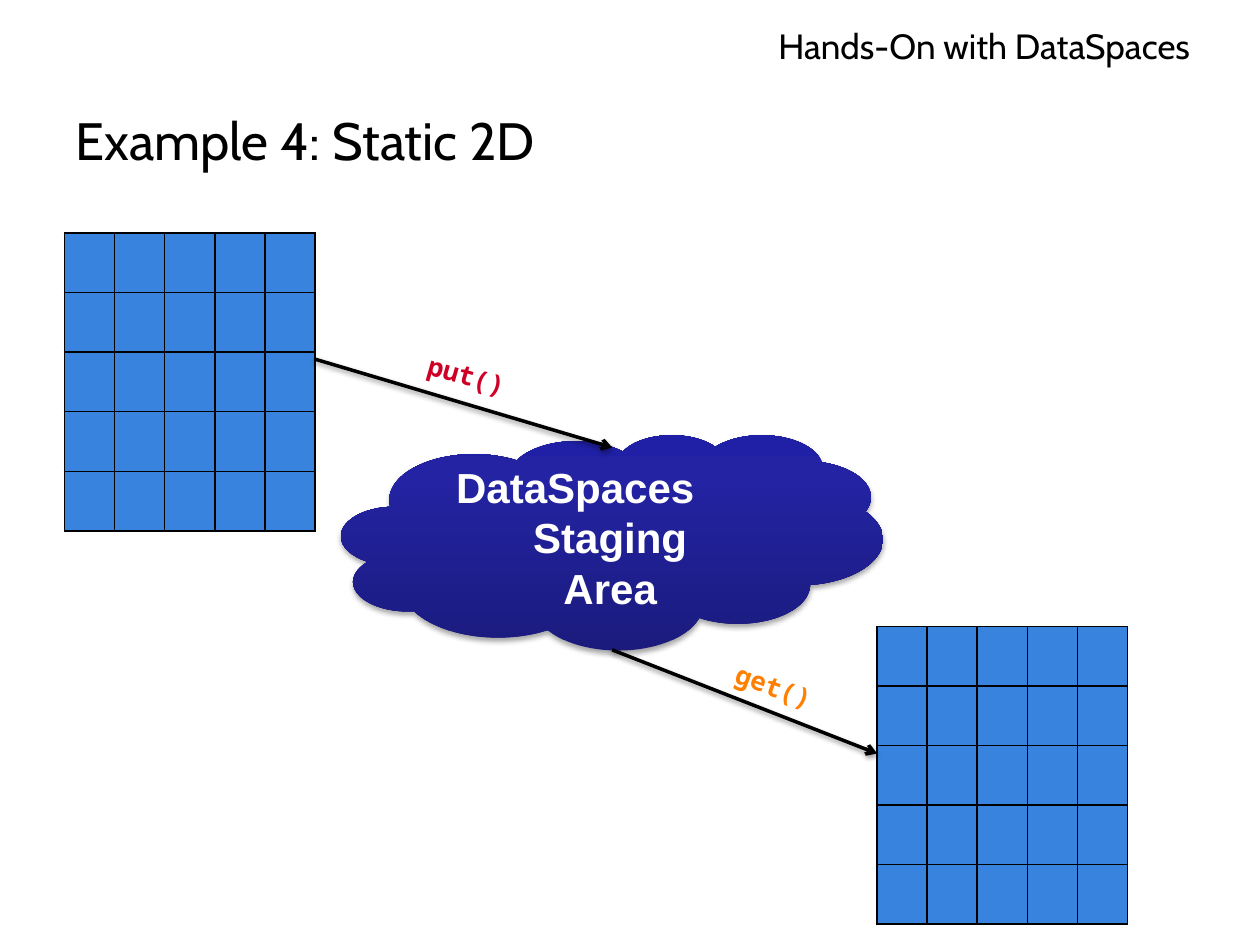
from copy import deepcopy

from lxml import etree
from pptx import Presentation
from pptx.dml.color import RGBColor
from pptx.enum.shapes import MSO_CONNECTOR, MSO_SHAPE
from pptx.enum.text import MSO_ANCHOR, PP_ALIGN
from pptx.oxml.ns import qn
from pptx.util import Cm, Pt

LEFT, RIGHT, CENTER = PP_ALIGN.LEFT, PP_ALIGN.RIGHT, PP_ALIGN.CENTER
MIDDLE = MSO_ANCHOR.MIDDLE
CLOUD, STRAIGHT = MSO_SHAPE.CLOUD, MSO_CONNECTOR.STRAIGHT

COLORS = {
    "black": "000000",
    "white": "FFFFFF",
    "cell": "3783DD",
    "deep": "1B1B7E",
    "mid": "2323A3",
    "top": "2020A6",
    "put": "CE0026",
    "get": "FF8000",
}
SIDE = 5
COL, ROW = Cm(1.01), Cm(1.2)


def rgb(name):
    return RGBColor.from_string(COLORS[name])


def style(para, font, size, color, bold=False, align=LEFT):
    para.alignment = align
    for run in para.runs:
        run.font.name = font
        run.font.size = Pt(size)
        run.font.bold = bold
        run.font.color.rgb = rgb(color)


def add_shade(shape, dist, alpha):
    """Add a soft shadow below the shape; alpha is in percent."""
    props = shape.element.spPr
    for old in props.findall(qn("a:effectLst")):
        props.remove(old)
    effects = etree.SubElement(props, qn("a:effectLst"))
    shade = etree.SubElement(
        effects, qn("a:outerShdw"), blurRad=str(Pt(3.1)), dist=str(Pt(dist)),
        dir="5400000", rotWithShape="0")
    color = etree.SubElement(shade, qn("a:srgbClr"), val=COLORS["black"])
    etree.SubElement(color, qn("a:alpha"), val=str(alpha * 1000))


def add_border(cell):
    props = cell._tc.get_or_add_tcPr()
    for edge in ("a:lnL", "a:lnR", "a:lnT", "a:lnB"):
        line = etree.SubElement(props, qn(edge), w=str(Pt(1)))
        fill = etree.SubElement(line, qn("a:solidFill"))
        etree.SubElement(fill, qn("a:srgbClr"), val=COLORS["black"])


def add_grid(slide, left, top):
    table = slide.shapes.add_table(
        SIDE, SIDE, Cm(left), Cm(top), COL * SIDE, ROW * SIDE).table
    table.first_row = table.horz_banding = False
    for col in table.columns:
        col.width = COL
    for row in table.rows:
        row.height = ROW
    for cell in table.iter_cells():
        cell.text_frame.paragraphs[0].font.size = Pt(12)
        add_border(cell)
        cell.fill.solid()
        cell.fill.fore_color.rgb = rgb("cell")


def add_cloud(slide):
    cloud = slide.shapes.add_shape(
        CLOUD, Cm(6.88), Cm(8.76), Cm(10.92), Cm(4.34))
    cloud.line.fill.background()
    cloud.fill.gradient()
    cloud.fill.gradient_angle = 90
    stops = cloud.element.spPr.find(".//" + qn("a:gsLst"))
    stops.append(deepcopy(stops[-1]))
    marks = (("deep", 0), ("mid", 0.8), ("top", 1))
    for stop, (color, place) in zip(cloud.fill.gradient_stops, marks):
        stop.color.rgb = rgb(color)
        stop.position = place
    add_shade(cloud, 1.8, 35)

    frame = cloud.text_frame
    frame.text = "DataSpaces\nStaging Area"
    frame.vertical_anchor = MIDDLE
    for para in frame.paragraphs:
        style(para, "Arial", 24, "white", True, CENTER)
    # Opposite margins stagger the two centred lines.
    upper, lower = frame.paragraphs
    upper._p.get_or_add_pPr().set("marR", str(Cm(0.71)))
    lower._p.get_or_add_pPr().set("marL", str(Cm(1.41)))


def add_arrow(slide, start, end):
    points = [Cm(value) for value in start + end]
    arrow = slide.shapes.add_connector(STRAIGHT, *points)
    arrow.line.width = Pt(2)
    arrow.line.color.rgb = rgb("black")
    etree.SubElement(arrow.line._ln, qn("a:tailEnd"), type="arrow")
    add_shade(arrow, 1.6, 38)


def add_text(slide, text, box, font, size, color,
             bold=False, align=LEFT, turn=0):
    shape = slide.shapes.add_textbox(*[Cm(value) for value in box])
    shape.rotation = turn
    frame = shape.text_frame
    frame.word_wrap = True
    frame.text = text
    style(frame.paragraphs[0], font, size, color, bold, align)


def set_title(slide, text):
    title = slide.shapes.title
    title.left, title.top = Cm(1.27), Cm(1.7)
    title.width, title.height = Cm(22.86), Cm(2.24)
    title.text_frame.text = text
    title.text_frame.vertical_anchor = MIDDLE
    style(title.text_frame.paragraphs[0], "Cabin", 30, "black")


def main():
    deck = Presentation()
    deck.slide_width, deck.slide_height = Cm(25.4), Cm(19.05)
    slide = deck.slides.add_slide(deck.slide_layouts[5])

    add_text(slide, "Hands-On with DataSpaces", (14.94, 0.36, 9.3, 1.12),
             "Cabin", 20, "black", align=RIGHT)
    set_title(slide, "Example 4: Static 2D")
    add_grid(slide, 1.3, 4.7)
    add_cloud(slide)
    add_grid(slide, 17.68, 12.63)
    add_arrow(slide, (6.35, 7.24), (12.34, 9.02))
    add_arrow(slide, (12.34, 13.1), (17.68, 15.19))
    for name, left, top, turn in (("put", 8.36, 7.16, 16),
                                  ("get", 14.55, 13.44, 20.1)):
        add_text(slide, name + "()", (left, top, 2.39, 0.89),
                 "Noto Sans Mono", 15, name, bold=True, turn=turn)

    deck.save("out.pptx")


if __name__ == "__main__":
    main()
